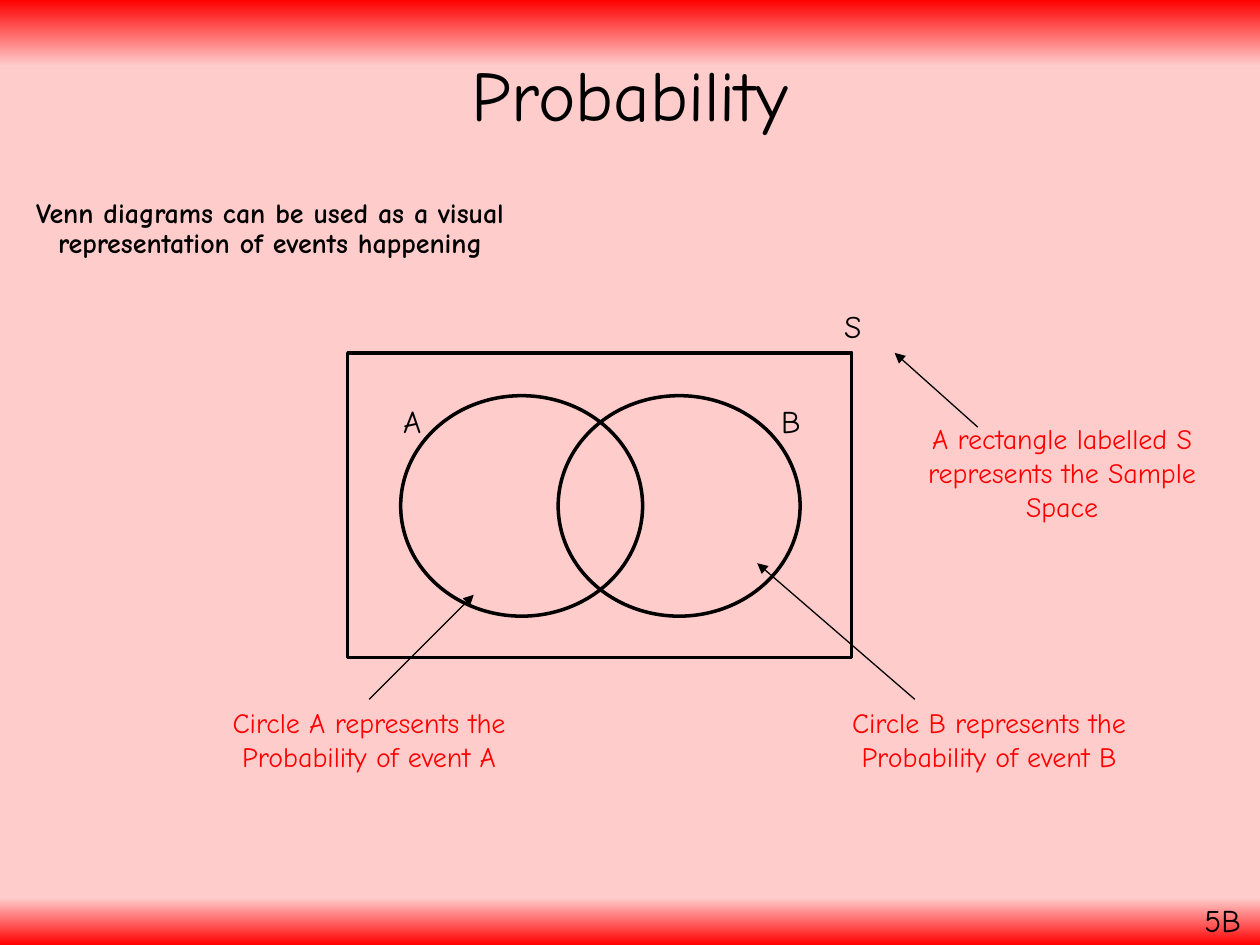
from lxml import etree
from pptx import Presentation
from pptx.dml.color import RGBColor
from pptx.enum.shapes import MSO_CONNECTOR, MSO_SHAPE
from pptx.enum.text import MSO_ANCHOR, PP_ALIGN
from pptx.oxml.ns import qn
from pptx.util import Inches, Pt

CENTER, LEFT = PP_ALIGN.CENTER, PP_ALIGN.LEFT
TOP, MIDDLE = MSO_ANCHOR.TOP, MSO_ANCHOR.MIDDLE
RECTANGLE, OVAL = MSO_SHAPE.RECTANGLE, MSO_SHAPE.OVAL
STRAIGHT = MSO_CONNECTOR.STRAIGHT
TITLE_ONLY = 5
FONT = "Comic Neue"
BLACK, RED, PINK = "000000", "FF0000", "FFCCCC"
BACKGROUND_STOPS = [(0, RED), (7, PINK), (95, PINK), (100, RED)]

CIRCLE_TOP, CIRCLE_WIDTH, CIRCLE_HEIGHT = 3.14, 1.92, 1.75
CAPTION_TOP, CAPTION_WIDTH, CAPTION_HEIGHT = 5.55, 2.5, 0.9
LABEL_WIDTH, LABEL_HEIGHT = 0.42, 0.4


def color(value):
    return RGBColor.from_string(value)


def lengths(*values):
    return [Inches(value) for value in values]


def set_values(target, values):
    for name, value in values.items():
        setattr(target, name, value)


def paint_background(page):
    fill = page.background.fill
    fill.gradient()
    fill.gradient_angle = 270
    stops = page.element.find(".//" + qn("a:gsLst"))
    for stop in list(stops):
        stops.remove(stop)
    for percent, value in BACKGROUND_STOPS:
        stop = etree.SubElement(stops, qn("a:gs"), pos=str(percent * 1000))
        etree.SubElement(stop, qn("a:srgbClr"), val=value)


def write_text(box, text, size, ink=BLACK, bold=False, align=CENTER,
               anchor=TOP, spacing=1.0, wrap=True):
    frame = box.text_frame
    set_values(frame, {"word_wrap": wrap, "vertical_anchor": anchor})
    para = frame.paragraphs[0]
    set_values(para, {"alignment": align, "line_spacing": spacing})
    span = para.add_run()
    span.text = text
    set_values(span.font, {"name": FONT, "size": Pt(size), "bold": bold})
    span.font.color.rgb = color(ink)


def add_title(page, text):
    title = page.shapes.title
    left, top, width, height = lengths(0.69, 0.24, 8.62, 1.09)
    set_values(title, {"left": left, "top": top, "width": width, "height": height})
    write_text(title, text, 40.5, anchor=MIDDLE, spacing=0.9)


def add_text(page, place, text, size, **formats):
    write_text(page.shapes.add_textbox(*lengths(*place)), text, size, **formats)


def add_label(page, left, top, text):
    add_text(page, (left, top, LABEL_WIDTH, LABEL_HEIGHT), text, 18, align=LEFT)


def add_caption(page, left, top, text):
    add_text(page, (left, top, CAPTION_WIDTH, CAPTION_HEIGHT), text, 16, ink=RED)


def add_outline(page, kind, place):
    shape = page.shapes.add_shape(kind, *lengths(*place))
    shape.shadow.inherit = False
    shape.fill.background()
    shape.line.color.rgb = color(BLACK)
    shape.line.width = Pt(2)


def add_arrow(page, start, end):
    arrow = page.shapes.add_connector(STRAIGHT, *lengths(*start, *end))
    arrow.line.color.rgb = color(BLACK)
    arrow.line.width = Pt(0.75)
    properties = arrow.element.spPr
    etree.SubElement(properties.find(qn("a:ln")), qn("a:tailEnd"), type="triangle")
    etree.SubElement(properties, qn("a:effectLst"))


def main():
    deck = Presentation()
    deck.slide_width, deck.slide_height = lengths(10, 7.5)
    page = deck.slides.add_slide(deck.slide_layouts[TITLE_ONLY])
    paint_background(page)
    add_title(page, "Probability")
    add_text(page, (0.16, 1.53, 3.97, 5.22),
             "Venn diagrams can be used as a visual representation of events happening",
             16, bold=True, spacing=0.9)
    add_text(page, (9.46, 7.1, 0.52, 0.4), "5B", 18, align=LEFT, wrap=False)

    add_outline(page, RECTANGLE, (2.76, 2.8, 4, 2.42))
    for left in (3.18, 4.43):
        add_outline(page, OVAL, (left, CIRCLE_TOP, CIRCLE_WIDTH, CIRCLE_HEIGHT))
    add_label(page, 6.6, 2.39, "S")
    add_arrow(page, (7.76, 3.39), (7.1, 2.8))
    add_caption(page, 7.18, 3.3, "A rectangle labelled S represents the Sample Space")

    events = [
        ("A", 3.1, 1.68, (3.76, 4.72)),
        ("B", 6.1, 6.6, (6.01, 4.47)),
    ]
    for name, label_left, caption_left, target in events:
        middle = caption_left + CAPTION_WIDTH / 2
        start = middle if name == "A" else 7.26
        add_label(page, label_left, CIRCLE_TOP, name)
        add_arrow(page, (start, CAPTION_TOP), target)
        add_caption(page, caption_left, CAPTION_TOP,
                    f"Circle {name} represents the Probability of event {name}")
    deck.save("out.pptx")


if __name__ == "__main__":
    main()
